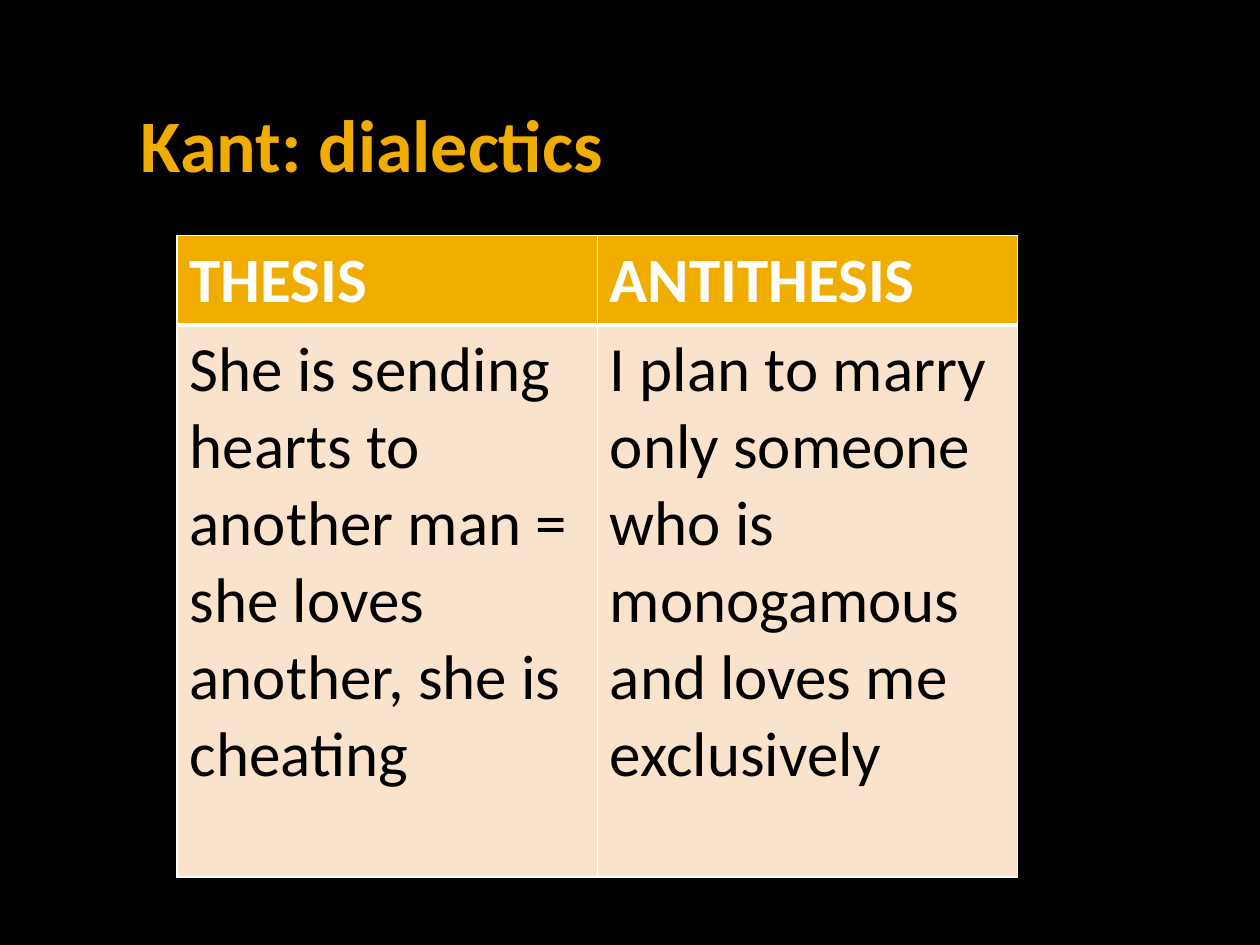
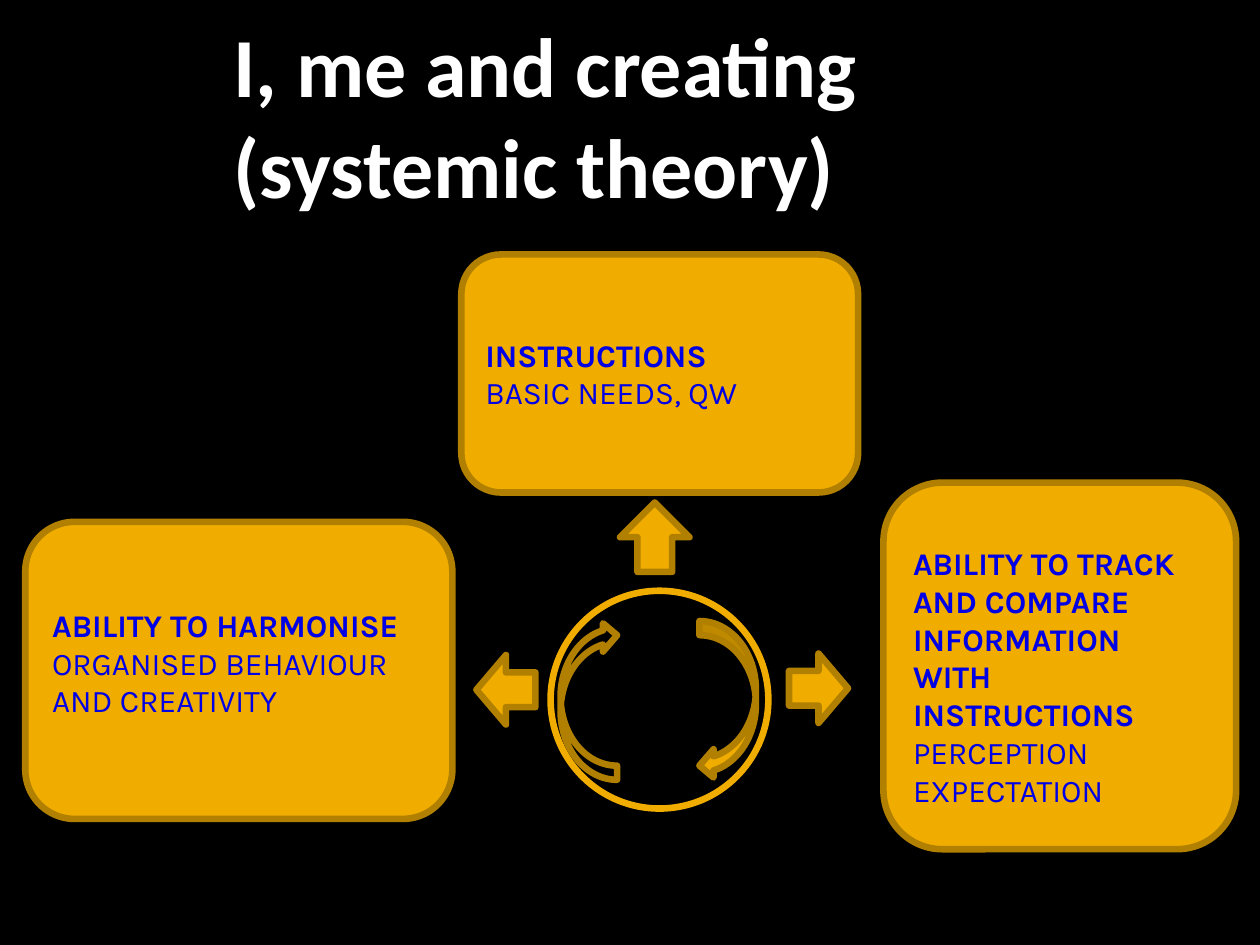
from lxml import etree
from pptx import Presentation
from pptx import util as u
from pptx.dml.color import RGBColor
from pptx.enum import shapes, text
from pptx.oxml import ns

BLACK = RGBColor(0x00, 0x00, 0x00)
WHITE = RGBColor(0xFF, 0xFF, 0xFF)
AMBER = RGBColor(0xF0, 0xAD, 0x00)
BROWN = RGBColor(0xB2, 0x80, 0x00)
CREAM = RGBColor(0xF9, 0xE3, 0xCC)
BLUE = RGBColor(0x00, 0x00, 0xE5)


def write(paragraph, words, color, **font_values):
    """Put words in a left-aligned paragraph and format its runs."""
    paragraph.text = words
    paragraph.alignment = text.PP_ALIGN.LEFT
    for run in paragraph.runs:
        run.font.color.rgb = color
        for name, value in font_values.items():
            setattr(run.font, name, value)


def add_outlined(slide, kind, box, fill, line, rotation=0):
    """Add a preset shape with the thick outline used on the diagram."""
    shape = slide.shapes.add_shape(kind, *[u.Cm(length) for length in box])
    shape.shadow.inherit = False
    shape.rotation = rotation
    shape.fill.solid()
    shape.fill.fore_color.rgb = fill
    shape.line.color.rgb = line
    shape.line.width = u.Pt(3.78)
    return shape


presentation = Presentation()
presentation.slide_width = u.Cm(25.4)
presentation.slide_height = u.Cm(19.05)

# Black slides with their titles
titles = [
    ("Kant: dialectics", (2.59, 1.98, 16.08, 3.96), AMBER, 42.3, 0.25,
     text.MSO_ANCHOR.TOP),
    ("I, me and creating\v(systemic theory)", (4.37, 1.57, 19.63, 2.77), WHITE, 48, 0.33,
     text.MSO_ANCHOR.BOTTOM),
]
slides = []
for words, box, color, size, indent, anchor in titles:
    slide = presentation.slides.add_slide(presentation.slide_layouts[6])
    slide.background.fill.solid()
    slide.background.fill.fore_color.rgb = BLACK
    title = slide.shapes.add_textbox(*[u.Cm(length) for length in box])
    frame_format = {
        "word_wrap": True, "vertical_anchor": anchor, "margin_left": u.Cm(indent),
        "margin_top": 0, "margin_right": u.Cm(0.13), "margin_bottom": 0,
    }
    for name, value in frame_format.items():
        setattr(title.text_frame, name, value)
    write(title.text_frame.paragraphs[0], words, color,
          name="Calibri", size=u.Pt(size), bold=True)
    slides.append(slide)
dialectics_slide, system_slide = slides

# Thesis and antithesis table
rows = [
    ("THESIS", "ANTITHESIS"),
    ("She is sending hearts to another man = she loves another, she is cheating",
     "I plan to marry only someone who is monogamous and loves me exclusively"),
]
row_heights = [1.8, 11.13]
table = dialectics_slide.shapes.add_table(
    2, 2, u.Cm(3.57), u.Cm(4.75), u.Cm(16.94), u.Cm(sum(row_heights))).table
for row_index, words_in_row in enumerate(rows):
    is_header = row_index == 0
    table.rows[row_index].height = u.Cm(row_heights[row_index])
    for column_index, words in enumerate(words_in_row):
        cell = table.cell(row_index, column_index)
        cell.fill.solid()
        cell.fill.fore_color.rgb = AMBER if is_header else CREAM
        write(cell.text_frame.paragraphs[0], words, WHITE if is_header else BLACK,
              name="Calibri", size=u.Pt(36), bold=is_header)
        # White borders, thicker between header and body
        properties = cell._tc.get_or_add_tcPr()
        for position, side in enumerate(["lnL", "lnR", "lnT", "lnB"]):
            divides = side == ("lnB" if is_header else "lnT")
            border = etree.Element(ns.qn("a:" + side), w=str(u.Pt(3 if divides else 1)))
            fill = etree.SubElement(border, ns.qn("a:solidFill"))
            etree.SubElement(fill, ns.qn("a:srgbClr"), val=str(WHITE))
            properties.insert(position, border)

# Boxes of the system: box, heading, detail, extra points above and below the text
system_boxes = [
    ((17.81, 9.73, 7.11, 7.39), "ABILITY TO TRACK AND COMPARE INFORMATION WITH INSTRUCTIONS",
     "PERCEPTION EXPECTATION", 12, 0),
    ((0.51, 10.52, 8.61, 5.99), "ABILITY TO HARMONISE",
     "ORGANISED BEHAVIOUR AND CREATIVITY", 12, 21),
    ((9.3, 5.13, 8, 4.8), "INSTRUCTIONS", "BASIC NEEDS, QW", 0, 0),
]
for box, heading, detail, above, below in system_boxes:
    shape = add_outlined(system_slide, shapes.MSO_SHAPE.ROUNDED_RECTANGLE, box, AMBER, BROWN)
    frame = shape.text_frame
    frame_format = {
        "word_wrap": True, "vertical_anchor": text.MSO_ANCHOR.MIDDLE,
        "margin_top": u.Cm(0.13) + u.Pt(above), "margin_bottom": u.Cm(0.13) + u.Pt(below),
    }
    for name, value in frame_format.items():
        setattr(frame, name, value)
    write(frame.paragraphs[0], heading, BLUE, name="Karla", size=u.Pt(18), bold=True)
    write(frame.add_paragraph(), detail, BLUE, name="Karla", size=u.Pt(18), bold=False)

# Cycle in the middle
add_outlined(system_slide, shapes.MSO_SHAPE.OVAL, (11.1, 11.91, 4.39, 4.39), BLACK, AMBER)
for left, fill, rotation in [(11.3, BLACK, 180), (14.1, AMBER, 0)]:
    add_outlined(system_slide, shapes.MSO_SHAPE.CURVED_LEFT_ARROW,
                 (left, 12.52, 1.14, 3.2), fill, BROWN, rotation)

# Arrows from the cycle to the boxes
for box, rotation in [
    ((15.8, 13.28, 1.4, 1.19), 90),
    ((9.5, 13.31, 1.4, 1.19), 270),
    ((12.5, 10.13, 1.4, 1.4), 0),
]:
    add_outlined(system_slide, shapes.MSO_SHAPE.UP_ARROW, box, AMBER, BROWN, rotation)

presentation.save("out.pptx")
